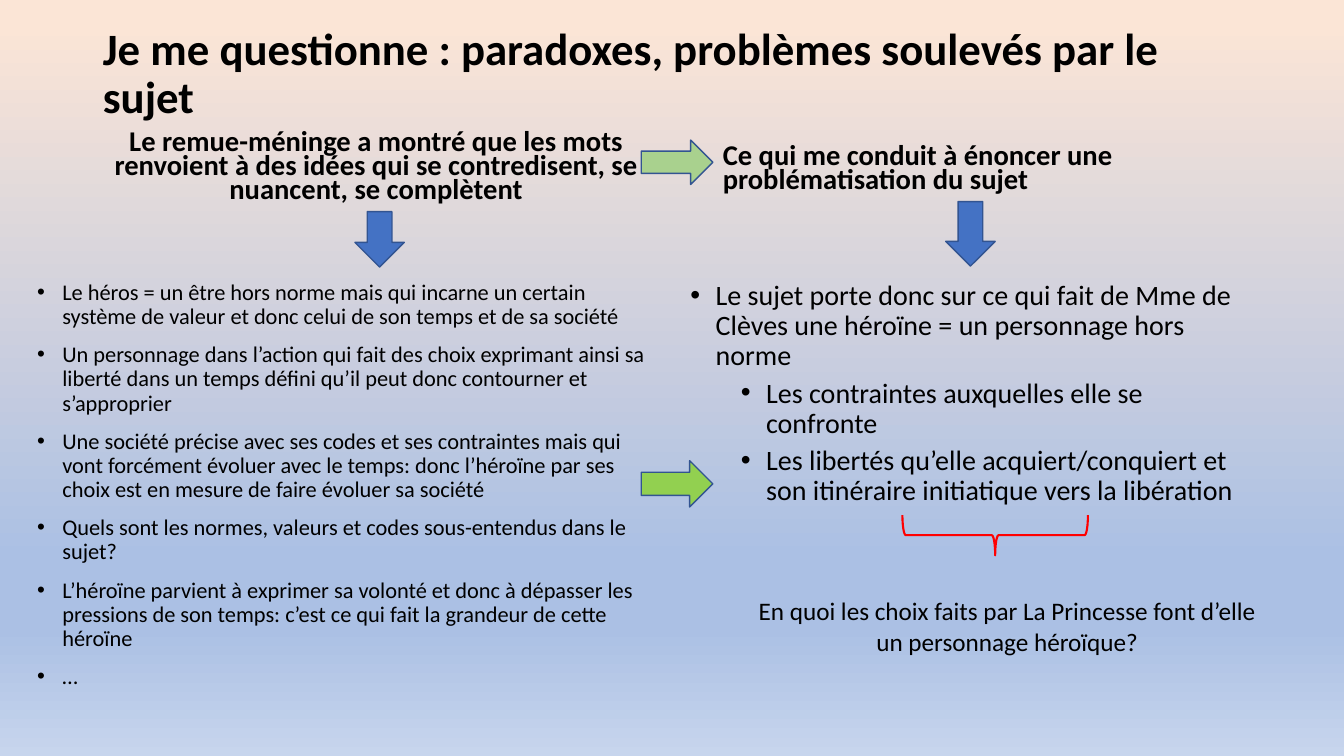
"""Build the slide on the paradoxes and problems raised by the subject."""
import copy

import pptx
import pptx.dml.color
import pptx.enum.shapes
import pptx.enum.text
import pptx.oxml
import pptx.oxml.ns
import pptx.util

Inches = pptx.util.Inches
Pt = pptx.util.Pt
Shape = pptx.enum.shapes.MSO_SHAPE
Align = pptx.enum.text.PP_ALIGN
Anchor = pptx.enum.text.MSO_ANCHOR

COLORS = {
    "text": "000000", "blue": "4472C4", "outline": "325491",
    "soft green": "A9D18E", "bright green": "92D050", "brace": "FF0000",
}
BACKGROUND = [(0.03, "FBE5D6"), (0.74, "ABC0E4"), (0.83, "ABC0E4"), (1, "C7D5ED")]


def rgb(value):
    return pptx.dml.color.RGBColor.from_string(value)


def write_text(box, lines, size, bold=False, align=Align.LEFT, anchor=Anchor.TOP,
               spacing=1.0, bulleted=False):
    """Fill a box with (level, wording) lines."""
    frame = box.text_frame
    frame.word_wrap = True
    frame.auto_size = pptx.enum.text.MSO_AUTO_SIZE.NONE
    frame.vertical_anchor = anchor
    for index, (level, wording) in enumerate(lines):
        para = frame.paragraphs[0] if index == 0 else frame.add_paragraph()
        para.text = wording
        para.level = level
        para.alignment = align
        para.line_spacing = spacing
        para.font.name = "Calibri"
        para.font.size = Pt(size)
        para.font.bold = bold
        para.font.color.rgb = rgb(COLORS["text"])
        if bulleted:
            para.space_before = Pt(5 if level else 10)
            properties = para._p.get_or_add_pPr()
            properties.set("marL", str(Inches(0.25 + 0.5 * level)))
            properties.set("indent", str(Inches(-0.25)))
            namespace = pptx.oxml.ns.nsdecls("a")
            for tag in ('buFont typeface="Arial"', 'buChar char="•"'):
                properties.append(pptx.oxml.parse_xml(f"<a:{tag} {namespace}/>".replace("<a:" + tag, "<a:" + tag + " ")))


deck = pptx.Presentation()
deck.slide_width = Inches(13.33)
deck.slide_height = Inches(7.5)
page = deck.slides.add_slide(deck.slide_layouts[5])

fill = page.background.fill
fill.gradient()
fill.gradient_angle = 270
stop_list = fill.gradient_stops[0]._gs.getparent()
for _ in range(len(BACKGROUND) - len(fill.gradient_stops)):
    stop_list.append(copy.deepcopy(stop_list[0]))
for stop, (position, color) in zip(fill.gradient_stops, BACKGROUND):
    stop.position = position
    stop.color.rgb = rgb(color)

title = page.shapes.title
title.left, title.top, title.width, title.height = map(Inches, (0.92, 0.4, 11.5, 0.69))
write_text(title, [(0, "Je me questionne\u00a0: paradoxes, problèmes soulevés par le sujet")],
           32, bold=True, anchor=Anchor.MIDDLE, spacing=0.9)

headings = [
    ((0.91, 1.18, 5.64, 0.9), Align.CENTER,
     "Le remue-méninge a montré que les mots renvoient à des idées qui se contredisent, "
     "se nuancent, se complètent"),
    ((7.07, 1.29, 5.38, 0.69), Align.LEFT,
     "Ce qui me conduit à énoncer une problématisation du sujet"),
]
for place, align, wording in headings:
    heading = page.shapes.add_textbox(*map(Inches, place))
    write_text(heading, [(0, wording)], 20.4, bold=True, align=align,
               anchor=Anchor.BOTTOM, spacing=0.7)

columns = [
    ((0.27, 2.74, 6.29, 4.03), 16, [
        (0, "Le héros = un être hors norme mais qui incarne un certain système de valeur "
            "et donc celui de son temps et de sa société"),
        (0, "Un personnage dans l’action qui fait des choix exprimant ainsi sa liberté dans "
            "un temps défini qu’il peut donc contourner et s’approprier"),
        (0, "Une société précise avec ses codes et ses contraintes mais qui vont forcément "
            "évoluer avec le temps: donc l’héroïne par ses choix est en mesure de faire "
            "évoluer sa société"),
        (0, "Quels sont les normes, valeurs et codes sous-entendus dans le sujet?"),
        (0, "L’héroïne parvient à exprimer sa volonté et donc à dépasser les pressions de "
            "son temps: c’est ce qui fait la grandeur de cette héroïne"),
        (0, "…"),
    ]),
    ((6.75, 2.74, 5.67, 4.03), 20, [
        (0, "Le sujet porte donc sur ce qui fait de Mme de Clèves une héroïne = un "
            "personnage hors norme"),
        (1, "Les contraintes auxquelles elle se confronte"),
        (1, "Les libertés qu’elle acquiert/conquiert et son itinéraire initiatique vers "
            "la libération"),
    ]),
]
for place, size, lines in columns:
    column = page.shapes.add_textbox(*map(Inches, place))
    write_text(column, lines, size, spacing=0.9, bulleted=True)

arrows = [
    (Shape.DOWN_ARROW, (3.52, 2.1, 0.49, 0.55), "blue"),
    (Shape.RIGHT_ARROW, (6.36, 1.39, 0.71, 0.44), "soft green"),
    (Shape.RIGHT_ARROW, (6.36, 4.57, 0.71, 0.46), "bright green"),
    (Shape.DOWN_ARROW, (9.38, 2, 0.49, 0.64), "blue"),
]
for kind, place, color in arrows:
    arrow = page.shapes.add_shape(kind, *map(Inches, place))
    arrow.shadow.inherit = False
    arrow.fill.solid()
    arrow.fill.fore_color.rgb = rgb(COLORS[color])
    arrow.line.color.rgb = rgb(COLORS["outline"])
    arrow.line.width = Pt(1)

brace = page.shapes.add_shape(Shape.RIGHT_BRACE, *map(Inches, (9.67, 4.39, 0.4, 1.84)))
brace.rotation = 90
brace.shadow.inherit = False
brace.fill.background()
brace.line.color.rgb = rgb(COLORS["brace"])
brace.line.width = Pt(1.5)

question = page.shapes.add_textbox(*map(Inches, (7.37, 5.86, 5.24, 0.71)))
write_text(question, [(0, "En quoi les choix faits par La Princesse font d’elle un "
                          "personnage héroïque?")], 18, align=Align.CENTER)

deck.save("out.pptx")
